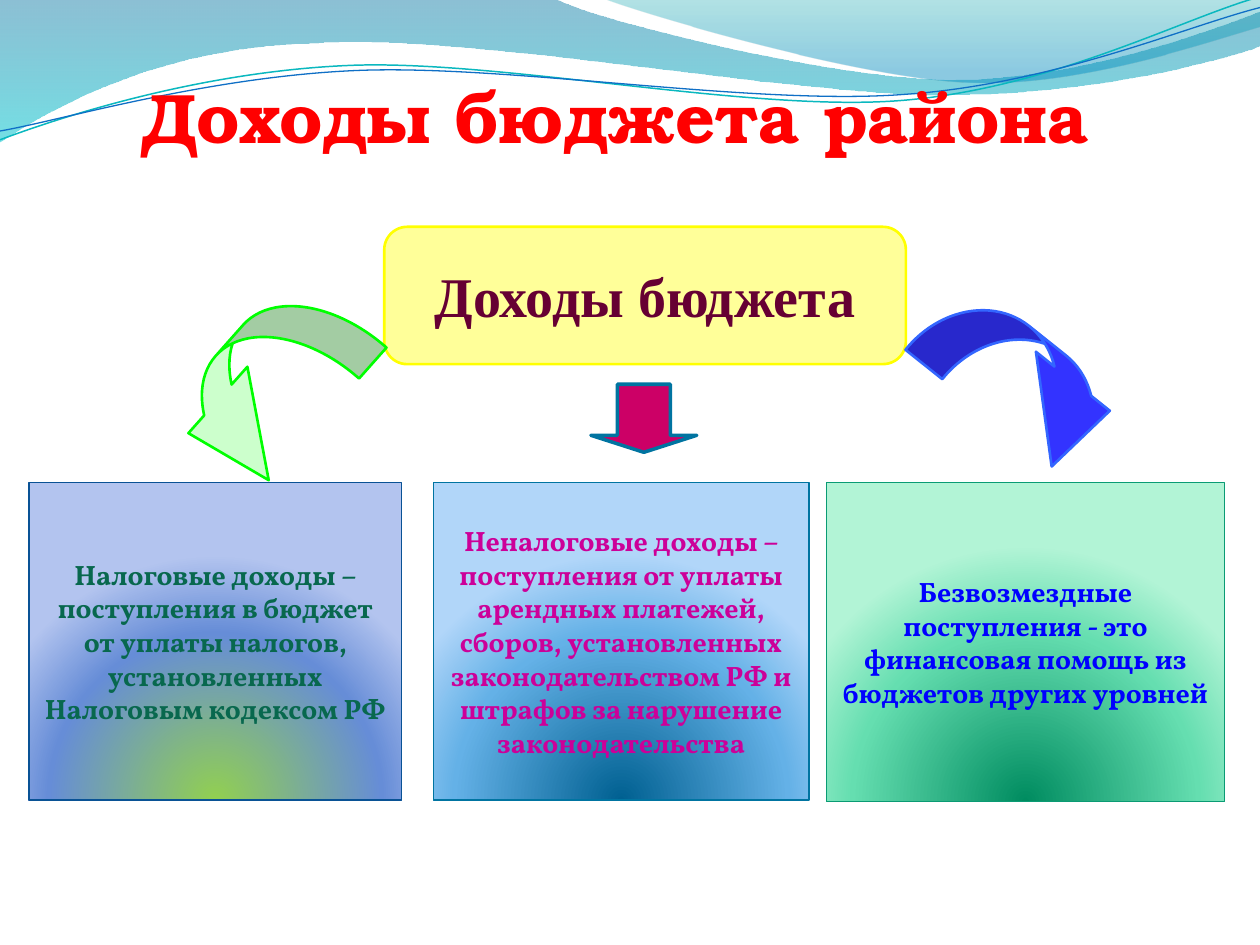
from dataclasses import dataclass
from typing import Optional

from lxml import etree
from pptx import Presentation
from pptx import util as u
from pptx.dml.color import RGBColor
from pptx.enum import shapes, text
from pptx.oxml.ns import nsdecls, qn

COLORS = {
    "red": "FF0000", "yellow": "FFFF00", "cream": "FFFF99", "maroon": "660033",
    "ocean": "0074A1", "cyan": "00C6CF", "teal": "00A1A9", "azure": "008BBF",
    "aqua_line": "0AB8BF", "blue_line": "0F6FC6",
    "lime": "92D050", "periwinkle": "668DD7", "lavender": "B3C4EF", "navy": "095295",
    "deep_sea": "006091", "sky": "64B1E7", "pale_sky": "B1D6F9",
    "emerald": "008C60", "mint": "65DEB0", "pale_mint": "B2F4D6", "jade": "0A9B74",
    "pine": "08684E", "magenta": "CC0099", "blue": "0000FF",
    "pale_green": "CCFFCC", "green": "00FF00", "indigo": "3333FF",
    "cobalt": "3366FF", "crimson": "CC0066",
}
LINEAR = '<a:lin ang="5400000" scaled="0"/>'
RADIAL = ('<a:path path="circle"><a:fillToRect l="50000" t="130000" '
          'r="50000" b="-30000"/></a:path>')
KINDS = shapes.MSO_SHAPE


@dataclass
class Stop:
    position: int
    color: str
    opacity: int = 100


@dataclass
class Wave:
    start: tuple
    segments: list
    stops: Optional[list] = None
    line: Optional[str] = None
    weight: float = 0


@dataclass
class Label:
    wording: str
    font: str
    size: int
    color: str
    inset: float = 0


@dataclass
class Block:
    kind: int
    box: tuple
    line: str
    weight: float
    fill: Optional[str] = None
    stops: Optional[list] = None
    rotation: float = 0
    adjustments: tuple = ()
    label: Optional[Label] = None


WAVES = [
    Wave((0, 0), [
        (4.4, -0.01), (4.76, 0.17, 6.64, 0.63, 7.58, 0.63),
        (8.53, 0.63, 9.58, 0.26, 10, 0.09), (10.01, 0.36),
        (9.83, 0.44, 8.7, 0.76, 7.46, 0.75), (6.22, 0.75, 3.82, 0.28, 2.57, 0.34),
        (1.29, 0.36, 0.46, 0.83, -0.01, 1.13), (0, 0),
    ], [Stop(0, "ocean", 45), Stop(100, "cyan", 55)]),
    Wave((4.79, -0.01), [
        (5.09, 0.11, 6.82, 0.62, 7.69, 0.65), (8.56, 0.69, 9.61, 0.32, 10, 0.21),
        (10, 0), (4.79, -0.01),
    ], [Stop(0, "teal", 30), Stop(80, "azure", 45)]),
    Wave((0, 1.11), [
        (0.48, 0.93, 1.58, 0.57, 2.77, 0.52), (3.95, 0.47, 5.93, 0.89, 7.13, 0.8),
        (8.33, 0.71, 9.38, 0.15, 9.98, -0.02),
    ], line="aqua_line", weight=0.85),
    Wave((0, 1.04), [
        (0.47, 0.96, 1.64, 0.61, 2.83, 0.56), (4.03, 0.51, 5.97, 0.84, 7.17, 0.75),
        (8.36, 0.67, 9.41, 0.21, 10, 0.06),
    ], line="blue_line", weight=0.75),
]

TITLE = Label("Доходы бюджета района", "TeX Gyre Bonum", 40, "red")


def income(box: tuple, line: str, ramp: tuple, label: Label) -> Block:
    """Describe one income category with its radial colour ramp."""
    stops = [Stop(position, color) for position, color in zip((0, 68, 100), ramp)]
    return Block(KINDS.RECTANGLE, box, line, 0.75, stops=stops, label=label)


BLOCKS = [
    Block(KINDS.ROUNDED_RECTANGLE, (3.05, 1.8, 4.14, 1.09), "yellow", 1.5, "cream",
          adjustments=(0.167,),
          label=Label("Доходы бюджета", "Times New Roman", 32, "maroon", 0.14)),
    income((3.44, 3.83, 2.98, 2.52), "ocean", ("deep_sea", "sky", "pale_sky"),
           Label("Неналоговые доходы – поступления от уплаты арендных платежей, "
                 "сборов, установленных законодательством РФ и штрафов за нарушение "
                 "законодательства", "Vollkorn", 16, "magenta")),
    income((0.23, 3.83, 2.96, 2.52), "navy", ("lime", "periwinkle", "lavender"),
           Label("Налоговые доходы – поступления в бюджет от уплаты налогов, "
                 "установленных Налоговым кодексом РФ", "Vollkorn", 16, "pine", 0.12)),
    income((6.56, 3.83, 3.16, 2.53), "jade", ("emerald", "mint", "pale_mint"),
           Label("Безвозмездные поступления - это финансовая помощь из бюджетов "
                 "других уровней", "Vollkorn", 16, "blue", 0.12)),
    Block(KINDS.CURVED_UP_ARROW, (1.24, 2.61, 1.76, 0.97), "green", 1.5, "pale_green",
          rotation=131.6, adjustments=(0.338, 0.727, 0.747)),
    Block(KINDS.CURVED_DOWN_ARROW, (7.22, 2.68, 1.86, 0.76), "cobalt", 1.5, "indigo",
          rotation=38.6, adjustments=(0.492, 0.987, 0.834)),
    Block(KINDS.DOWN_ARROW, (4.69, 3.05, 0.84, 0.54), "ocean", 2, "crimson",
          adjustments=(0.5, 0.25)),
]


def rgb(name: str) -> RGBColor:
    """Look up a named colour."""
    return RGBColor.from_string(COLORS[name])


def fill_gradient(shape, stops: list, direction: str) -> None:
    """Fill a shape with gradient stops that may be translucent."""
    marks = "".join(
        f'<a:gs pos="{stop.position * 1000}"><a:srgbClr val="{COLORS[stop.color]}">'
        f'<a:alpha val="{stop.opacity * 1000}"/></a:srgbClr></a:gs>' for stop in stops)
    gradient = etree.fromstring(
        f'<a:gradFill {nsdecls("a")} rotWithShape="1"><a:gsLst>{marks}</a:gsLst>'
        f'{direction}</a:gradFill>')
    shape.fill.background()
    properties = shape._element.spPr
    properties.replace(properties.find(qn("a:noFill")), gradient)


def set_line(shape, color: Optional[str], weight: float) -> None:
    """Outline a shape, or leave it without an outline."""
    if color:
        shape.line.color.rgb = rgb(color)
        shape.line.width = u.Pt(weight)
    else:
        shape.line.fill.background()


def bend(ribbon, segments: list) -> None:
    """Join the three points of each curved segment into a cubic curve."""
    points = iter(list(ribbon._element.iter(qn("a:lnTo"))))
    for segment in segments:
        corner = next(points)
        if len(segment) == 2:
            continue
        curve = etree.Element(qn("a:cubicBezTo"))
        corner.addprevious(curve)
        for step in (corner, next(points), next(points)):
            curve.append(step[0])
            step.getparent().remove(step)


def draw_wave(slide, wave: Wave) -> None:
    """Draw one ribbon or line of the header."""
    builder = slide.shapes.build_freeform(*map(u.Inches, wave.start))
    for segment in wave.segments:
        lengths = [u.Inches(value) for value in segment]
        builder.add_line_segments(list(zip(lengths[::2], lengths[1::2])), close=False)
    if wave.stops:
        builder.add_line_segments([], close=True)
    ribbon = builder.convert_to_shape()
    bend(ribbon, wave.segments)
    ribbon.shadow.inherit = False
    if wave.stops:
        fill_gradient(ribbon, wave.stops, LINEAR)
    else:
        ribbon.fill.background()
    set_line(ribbon, wave.line, wave.weight)


def write(shape, label: Label, anchor, inset_y: float = 0) -> None:
    """Put a bold centred label into a shape."""
    frame = shape.text_frame
    frame.word_wrap = True
    frame.vertical_anchor = anchor
    frame.margin_left = frame.margin_right = u.Inches(label.inset)
    frame.margin_top, frame.margin_bottom = u.Inches(inset_y), 0
    paragraph = frame.paragraphs[0]
    paragraph.text = label.wording
    paragraph.alignment = text.PP_ALIGN.CENTER
    paragraph.font.name = label.font
    paragraph.font.size = u.Pt(label.size)
    paragraph.font.bold = True
    paragraph.font.color.rgb = rgb(label.color)


def draw_block(slide, block: Block) -> None:
    """Draw a box or an arrow with its label."""
    shape = slide.shapes.add_shape(block.kind, *map(u.Inches, block.box))
    shape.shadow.inherit = False
    shape.rotation = block.rotation
    for index, value in enumerate(block.adjustments):
        shape.adjustments[index] = value
    if block.stops:
        fill_gradient(shape, block.stops, RADIAL)
    else:
        shape.fill.solid()
        shape.fill.fore_color.rgb = rgb(block.fill)
    set_line(shape, block.line, block.weight)
    if block.label:
        write(shape, block.label, text.MSO_ANCHOR.MIDDLE)


def main() -> None:
    """Build the slide and save it."""
    deck = Presentation()
    deck.slide_width, deck.slide_height = u.Inches(10), u.Inches(7.5)
    slide = deck.slides.add_slide(deck.slide_layouts[6])
    for wave in WAVES:
        draw_wave(slide, wave)
    title = slide.shapes.add_textbox(*map(u.Inches, (0.23, 0.35, 9.3, 0.9)))
    write(title, TITLE, text.MSO_ANCHOR.BOTTOM, 0.05)
    for block in BLOCKS:
        draw_block(slide, block)
    deck.save("out.pptx")


if __name__ == "__main__":
    main()
